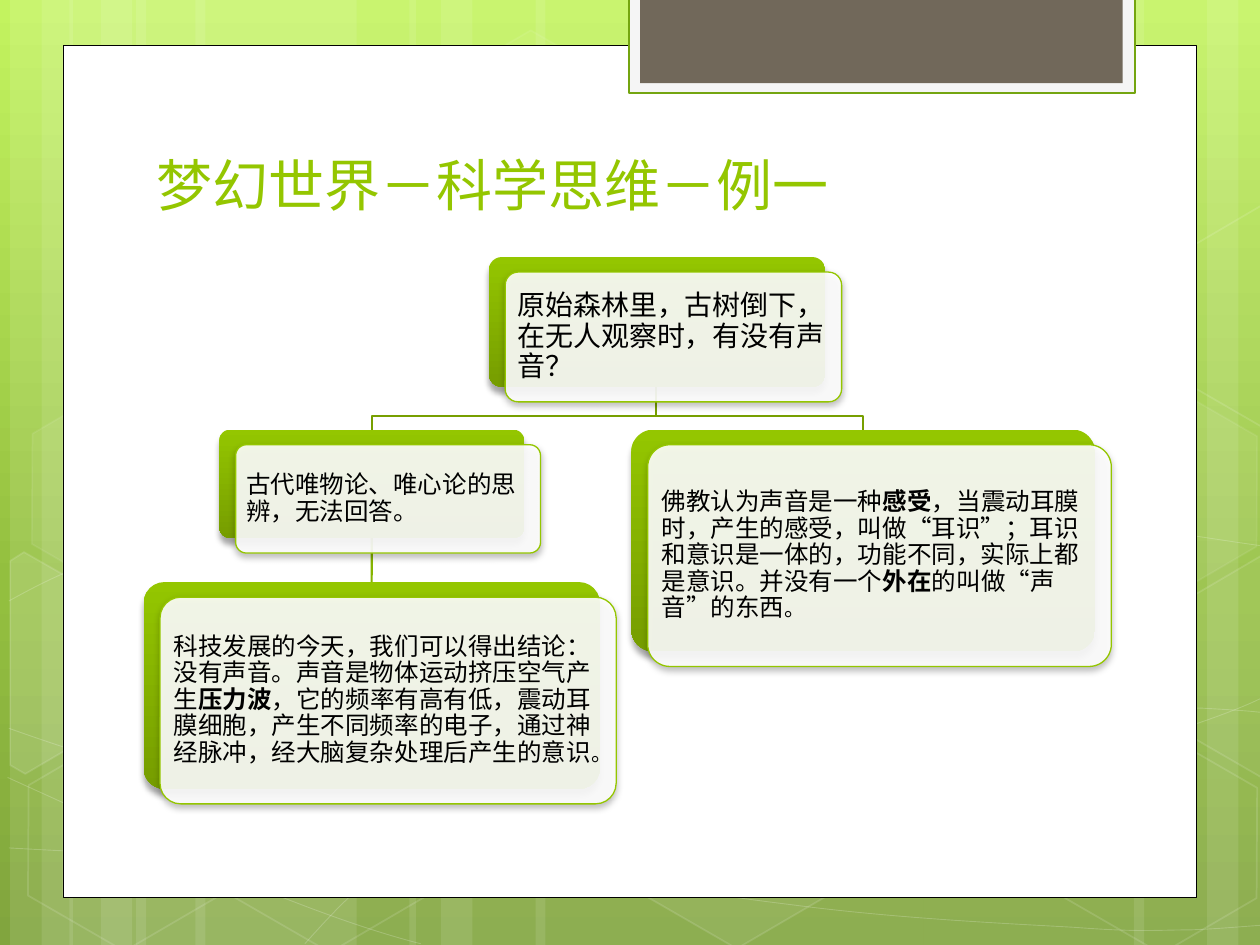
from dataclasses import dataclass
from math import cos, radians, sin
from lxml import etree
from pptx import Presentation
from pptx.dml.color import RGBColor
from pptx.enum.shapes import MSO_CONNECTOR, MSO_SHAPE
from pptx.enum.text import MSO_ANCHOR, PP_ALIGN
from pptx.oxml.ns import qn
from pptx.util import Inches, Pt

RECT, ROUND, HEX = MSO_SHAPE.RECTANGLE, MSO_SHAPE.ROUNDED_RECTANGLE, MSO_SHAPE.HEXAGON
STRAIGHT = MSO_CONNECTOR.STRAIGHT
MIDDLE, BOTTOM = MSO_ANCHOR.MIDDLE, MSO_ANCHOR.BOTTOM
LEFT = PP_ALIGN.LEFT


@dataclass(frozen=True)
class Theme:
    font: str = "League Spartan"
    white: str = "FFFFFF"
    black: str = "000000"
    green: str = "94C600"
    deep: str = "769D00"
    wire: str = "779F00"
    stem: str = "86B400"
    frame: str = "74A510"
    pale: str = "F5F5F5"
    brown: str = "71685A"
    sky: tuple = ((0, "C3F35F"), (62, "93BF3F"), (100, "81A53E"))
    title: int = 32
    head: int = 16
    body: int = 14
    stop: int = 12


T = Theme()
TILT = 30

# Background: left and width of the bars
BARS = [(1.08, 1.75), (0.08, 0.5), (0.33, 0.83), (1.55, 1.75), (0.55, 0.5), (0.8, 0.83),
        (7.33, 1.75), (9.58, 0.5), (9, 0.83), (4.25, 3.08), (3.25, 0.5), (3.5, 0.83)]

# Waves: start point, then Bezier triples
WAVES = [
    [(0.07, 6.73), (0.61, 6.76), (1.15, 6.79), (1.9, 6.78), (2.65, 6.77), (3.58, 6.75),
     (4.58, 6.65), (5.58, 6.55), (7, 6.36), (7.92, 6.17), (8.83, 5.98), (9.77, 5.68),
     (10.07, 5.51)],
    [(0.07, 4.77), (0.36, 4.61), (0.65, 4.46), (1.21, 4.31), (1.78, 4.16), (2.59, 3.94),
     (3.47, 3.87), (4.36, 3.8), (5.44, 3.79), (6.54, 3.87), (7.64, 3.95), (9.47, 4.26),
     (10.07, 4.34)],
    [(0.06, 6.17), (1.27, 6.72), (2.47, 7.27), (3.34, 7.49)],
    [(0.07, 5.78), (0.38, 5.89), (0.7, 6), (1.28, 6.16), (1.86, 6.31), (2.73, 6.56),
     (3.57, 6.73), (4.4, 6.9), (5.45, 7.08), (6.28, 7.18), (7.11, 7.29), (8, 7.33),
     (8.53, 7.36), (9.05, 7.4), (9.19, 7.38), (9.45, 7.38), (9.71, 7.37), (9.89, 7.35),
     (10.07, 7.34)],
    [(2.42, 7.49), (2.6, 7.29), (2.78, 7.09), (3.02, 6.91), (3.26, 6.73), (3.6, 6.53),
     (3.88, 6.39), (4.16, 6.25), (4.33, 6.19), (4.7, 6.09), (5.06, 5.99), (5.73, 5.85),
     (6.08, 5.78), (6.44, 5.71), (6.49, 5.71), (6.8, 5.69), (7.11, 5.66), (7.6, 5.63),
     (7.94, 5.62), (8.29, 5.61), (8.86, 5.62), (8.86, 5.62), (9.08, 5.62), (9.3, 5.62),
     (9.53, 5.62), (9.71, 5.63), (9.88, 5.64), (9.97, 5.65), (10.06, 5.66), (10.03, 5.65),
     (10.06, 5.66)],
]

# Hexagons: left, top, fill opacity, line opacity
HEXES = [(3.34, 0.36, 4, 8), (4.97, 5.89, 6, 12), (0.11, 5.91, 0, 12), (0.14, 3.12, 7, 8),
         (1.74, 5.92, 0, 12), (7.53, 4.53, 10, 12), (8.34, 5.93, 0, 12), (8.34, 3.14, 7, 8)]

# Hexagons cut by the slide edge: fill opacity, centre, points
CUTS = [
    (10, (0.36, 5.35), [(0.08, 4.45), (0.19, 4.38), (0.96, 4.82), (0.95, 5.7), (0.2, 6.14), (0.08, 6.07)]),
    (4, (9.85, 5.2), [(9.26, 4.85), (10.01, 4.41), (10.09, 4.46), (10.09, 6.13), (10.02, 6.17), (9.26, 5.73)]),
    (0, (9.85, 2.41), [(9.26, 2.07), (10.01, 1.63), (10.1, 1.68), (10.09, 3.35), (10.02, 3.39), (9.26, 2.95)]),
]


def add(root, tag, **attrs):
    return etree.SubElement(root, qn(tag), {k: str(v) for k, v in attrs.items()})


def fade(root, alpha):
    add(next(root.iter(qn("a:srgbClr"))), "a:alpha", val=alpha * 1000)


def blend(fill, root, stops):
    """Give a fill a gradient that runs from top to bottom."""
    fill.gradient()
    fill.gradient_angle = 270
    marks = next(root.iter(qn("a:gsLst")))
    for mark in list(marks):
        marks.remove(mark)
    for place, color in stops:
        add(add(marks, "a:gs", pos=place * 1000), "a:srgbClr", val=color)


def style(shape, fill=None, alpha=100, line=None, width=1, clear=100):
    """Set fill and line, with their opacity in percent."""
    shape.shadow.inherit = False
    props = shape._element.spPr
    shape.fill.background()
    if fill and alpha:
        shape.fill.solid()
        shape.fill.fore_color.rgb = RGBColor.from_string(fill)
        fade(props.find(qn("a:solidFill")), alpha)
    shape.line.fill.background()
    if line:
        shape.line.color.rgb = RGBColor.from_string(line)
        shape.line.width = Pt(width)
        fade(props.find(qn("a:ln")), clear)
    return shape


def block(slide, kind, at, **look):
    return style(slide.shapes.add_shape(kind, *map(Inches, at)), **look)


def trace(slide, points, close=False, **look):
    spots = [(Inches(x), Inches(y)) for x, y in points]
    pen = slide.shapes.build_freeform(*spots[0])
    pen.add_line_segments(spots[1:], close=close)
    return style(pen.convert_to_shape(), **look)


def bend(shape):
    """Join each three line steps into one Bezier step."""
    steps = list(shape._element.iter(qn("a:lnTo")))
    for i in range(0, len(steps), 3):
        arc = etree.Element(qn("a:cubicBezTo"))
        steps[i].addprevious(arc)
        for step in steps[i:i + 3]:
            arc.append(step[0])
            step.getparent().remove(step)


def turn(points, mid, angle):
    c, s = cos(radians(angle)), sin(radians(angle))
    (p, q) = mid
    return [(p + c * (x - p) - s * (y - q), q + s * (x - p) + c * (y - q)) for x, y in points]


def shade(shape, alpha, blur, drop):
    glow = add(shape._element.spPr.find(qn("a:effectLst")), "a:outerShdw",
               blurRad=Pt(blur), dist=Pt(drop), dir=5400000, rotWithShape=0)
    add(glow, "a:srgbClr", val=T.black)
    fade(glow, alpha)


def text(slide, at, runs, size=T.body, color=T.black, anchor=MIDDLE, pad=(0.1, 0.05), lead=1.0):
    """Write runs of (words, changes), where changes are bold or size."""
    frame = slide.shapes.add_textbox(*map(Inches, at)).text_frame
    frame.word_wrap, frame.vertical_anchor = True, anchor
    frame.margin_left = frame.margin_right = Inches(pad[0])
    frame.margin_top = frame.margin_bottom = Inches(pad[1])
    para = frame.paragraphs[0]
    para.alignment, para.line_spacing = LEFT, lead
    for words, change in runs:
        run = para.add_run()
        run.text = words
        run.font.name = T.font
        run.font.size = Pt(change.get("size", size))
        run.font.bold = change.get("bold", False)
        run.font.color.rgb = RGBColor.from_string(color)


def card(slide, at, runs, size=T.body):
    """Draw a green back plate, a white front plate and its text."""
    x, y, w, h = at
    back = block(slide, ROUND, at)
    blend(back.fill, back._element, ((0, T.green), (100, T.deep)))
    shade(back, 34, 3.5, 4)
    x, y, gap = x + 0.13, y + 0.12, 0.03 * h
    front = block(slide, ROUND, (x, y, w, h), fill=T.white, alpha=90, line=T.green, width=0.75)
    shade(front, 28, 4, 2)
    back.adjustments[0] = front.adjustments[0] = 0.1
    text(slide, (x + gap, y + gap, w - 2 * gap, h - 2 * gap), runs, size=size,
         pad=(size / 240, size / 240), lead=0.9)
    return back


def scene(slide):
    blend(slide.background.fill, slide._element, T.sky)
    for x, w in BARS:
        block(slide, RECT, (x, 0, w, 7.5), fill=T.white, alpha=10)
    for knots in WAVES:
        bend(trace(slide, knots, line=T.white, width=0.5, clear=20))
    for x, y, alpha, clear in HEXES:
        tile = block(slide, HEX, (x, y, 1.75, 1.52), fill=T.white, alpha=alpha, line=T.white, clear=clear)
        tile.rotation = TILT
        tile.adjustments[0], tile.adjustments[1] = 0.285, 1.155
    for alpha, mid, points in CUTS:
        trace(slide, turn(points, mid, -TILT), close=True, fill=T.white, alpha=alpha,
              line=T.white, clear=12).rotation = TILT
    # Page and top tab
    block(slide, RECT, (0.5, 0.36, 9, 6.76), fill=T.white, line=T.black, width=0.5)
    block(slide, RECT, (4.99, -0.02, 4.02, 0.76), fill=T.pale, line=T.frame, width=1.25)
    block(slide, RECT, (5.08, -0.02, 3.83, 0.68), fill=T.brown)


def tree(slide):
    # Lines lie behind the cards
    for x in (6.85, 2.95):
        trace(slide, [(5.21, 3.06), (5.21, 3.3), (x, 3.3), (x, 3.41)], line=T.wire, width=1.25)
    stem = slide.shapes.add_connector(STRAIGHT, *map(Inches, (2.95, 4.27, 2.95, 4.62)))
    stem.line.color.rgb = RGBColor.from_string(T.stem)
    stem.line.width = Pt(1.25)
    add(stem._element.spPr, "a:effectLst")
    # Cards
    bold, stop = {"bold": True}, ("。", {"size": T.stop})
    card(slide, (3.88, 2.04, 2.67, 1.03), [("原始森林里，古树倒下，在无人观察时，有没有声音？", {})], size=T.head)
    old = card(slide, (1.74, 3.41, 2.42, 0.86), [("古代唯物论、唯心论的思辨，无法回答。", {})])
    new = card(slide, (1.14, 4.62, 3.62, 1.64), [
        ("科技发展的今天，我们可以得出结论：没有声音。声音是物体运动挤压空气产生", {}), ("压力波", bold),
        ("，它的频率有高有低，震动耳膜细胞，产生不同频率的电子，通过神经脉冲，经大脑复杂处理后产生的意识", {}), stop])
    card(slide, (5.01, 3.41, 3.68, 1.76), [
        ("佛教认为声音是一种", {}), ("感受", bold),
        ("，当震动耳膜时，产生的感受，叫做“耳识”；耳识和意识是一体的，功能不同，实际上都是意识。并没有一个", {}),
        ("外在", bold), ("的叫做“声音”的东西", {}), stop])
    stem.begin_connect(old, 2)
    stem.end_connect(new, 0)


def main():
    deck = Presentation()
    deck.slide_width, deck.slide_height = Inches(10), Inches(7.5)
    slide = deck.slides.add_slide(deck.slide_layouts[6])
    scene(slide)
    text(slide, (1.14, 1.12, 7.68, 0.66), [("梦幻世界－科学思维－例一", {})],
         size=T.title, color=T.green, anchor=BOTTOM)
    tree(slide)
    deck.save("out.pptx")


if __name__ == "__main__":
    main()
